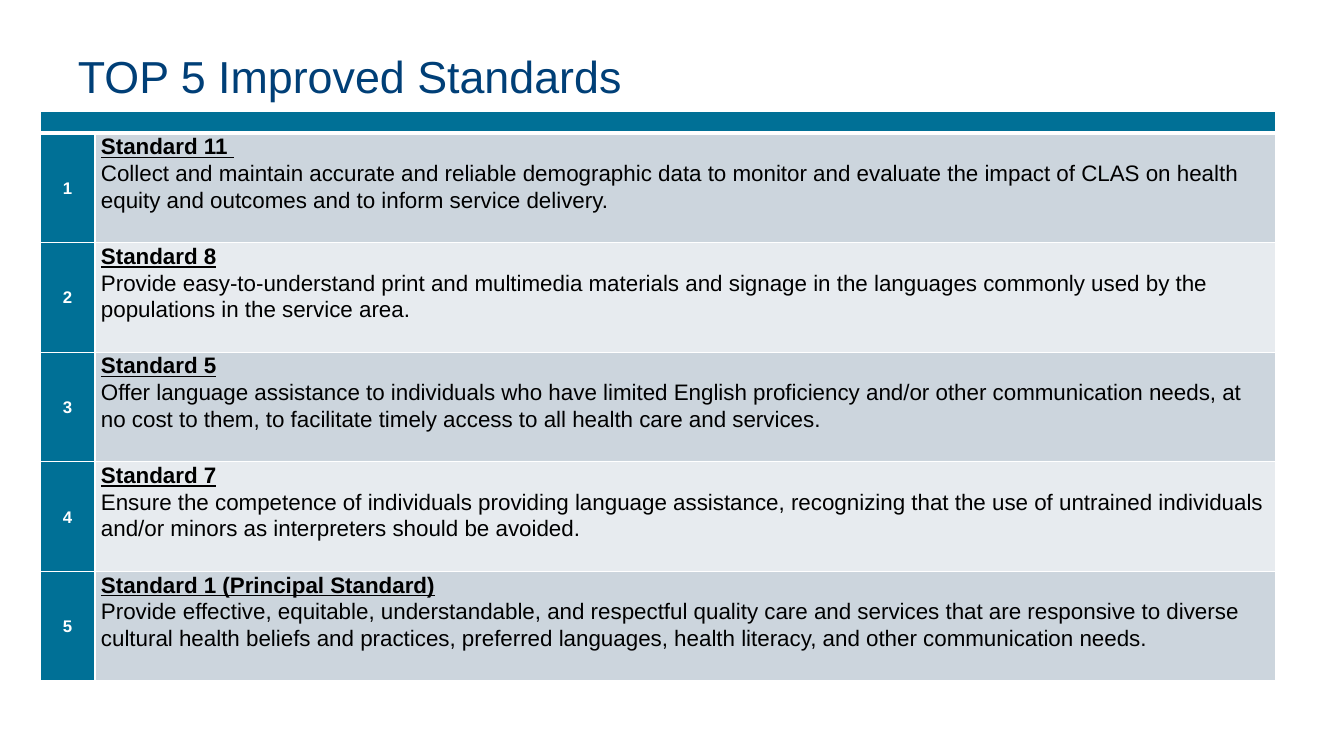
import pptx
import pptx.dml.color
import pptx.enum.text
import pptx.oxml.ns
import pptx.util
from lxml import etree

RGBColor = pptx.dml.color.RGBColor
ANCHOR = pptx.enum.text.MSO_ANCHOR
ALIGN = pptx.enum.text.PP_ALIGN
qn = pptx.oxml.ns.qn

NAVY = RGBColor(0x00, 0x3F, 0x77)
TEAL = RGBColor(0x00, 0x70, 0x96)
BANDS = (RGBColor(0xCC, 0xD5, 0xDD), RGBColor(0xE7, 0xEB, 0xEF))
BLACK = RGBColor(0x00, 0x00, 0x00)
WHITE = RGBColor(0xFF, 0xFF, 0xFF)

FONT = "Arial"
PX_PER_INCH = 100.8

STANDARDS = [
    ("Standard 11 ",
     "Collect and maintain accurate and reliable demographic data to monitor and evaluate "
     "the impact of CLAS on health equity and outcomes and to inform service delivery."),
    ("Standard 8",
     "Provide easy-to-understand print and multimedia materials and signage in the languages "
     "commonly used by the populations in the service area."),
    ("Standard 5",
     "Offer language assistance to individuals who have limited English proficiency and/or "
     "other communication needs, at no cost to them, to facilitate timely access to all "
     "health care and services."),
    ("Standard 7",
     "Ensure the competence of individuals providing language assistance, recognizing that "
     "the use of untrained individuals and/or minors as interpreters should be avoided."),
    ("Standard 1 (Principal Standard)",
     "Provide effective, equitable, understandable, and respectful quality care and services "
     "that are responsive to diverse cultural health beliefs and practices, preferred "
     "languages, health literacy, and other communication needs."),
]

RANK_FORMAT = {"size": pptx.util.Pt(12), "bold": True}
HEADING_FORMAT = {"size": pptx.util.Pt(16), "bold": True, "underline": True}
WORDING_FORMAT = {"size": pptx.util.Pt(16), "bold": False, "underline": False}


def px(length):
    return pptx.util.Emu(round(length * 914400 / PX_PER_INCH))


def write(paragraph, text, color, formats):
    run = paragraph.add_run()
    run.text = text
    run.font.name = FONT
    run.font.color.rgb = color
    for name, value in formats.items():
        setattr(run.font, name, value)


def style_cell(cell, color, heavy_side=None):
    """White borders, tight margins and a plain fill."""
    properties = cell._tc.get_or_add_tcPr()
    for side in ("lnL", "lnR", "lnT", "lnB"):
        width = pptx.util.Pt(3 if side == heavy_side else 1)
        line = etree.SubElement(properties, qn(f"a:{side}"), w=str(width))
        line_fill = etree.SubElement(line, qn("a:solidFill"))
        etree.SubElement(line_fill, qn("a:srgbClr"), val=str(WHITE))
    margins = {"margin_left": px(6), "margin_right": px(6),
               "margin_top": 0, "margin_bottom": 0}
    for name, value in margins.items():
        setattr(cell, name, value)
    cell.fill.solid()
    cell.fill.fore_color.rgb = color


def add_title(slide, left, top, width, height):
    title = slide.shapes.add_textbox(px(left), px(top), px(width), px(height)).text_frame
    title.word_wrap = True
    title.vertical_anchor = ANCHOR.MIDDLE
    write(title.paragraphs[0], "TOP 5 Improved Standards", NAVY, {"size": pptx.util.Pt(32)})


def add_standards(slide, left, top, width, height):
    rank_width, header_height = 55, 22
    row_height = (height - header_height) / len(STANDARDS)
    standards = slide.shapes.add_table(
        len(STANDARDS) + 1, 2, px(left), px(top), px(width), px(height)).table
    standards.first_row = standards.horz_banding = False
    standards.columns[0].width = px(rank_width)
    standards.columns[1].width = px(width - rank_width)

    # Empty header bar; small text size keeps it thin
    standards.rows[0].height = px(header_height)
    for cell in standards.rows[0].cells:
        style_cell(cell, TEAL, heavy_side="lnB")
        etree.SubElement(cell.text_frame.paragraphs[0]._p, qn("a:endParaRPr"), sz="800")
    standards.cell(0, 0).merge(standards.cell(0, 1))

    # Ranked standards
    for rank, (heading, wording) in enumerate(STANDARDS, start=1):
        standards.rows[rank].height = px(row_height)
        rank_cell, standard_cell = standards.rows[rank].cells
        heavy_side = "lnT" if rank == 1 else None
        style_cell(rank_cell, TEAL, heavy_side)
        style_cell(standard_cell, BANDS[(rank - 1) % 2], heavy_side)

        rank_cell.vertical_anchor = ANCHOR.MIDDLE
        rank_line = rank_cell.text_frame.paragraphs[0]
        rank_line.alignment = ALIGN.CENTER
        write(rank_line, str(rank), WHITE, RANK_FORMAT)

        heading_line = standard_cell.text_frame.paragraphs[0]
        wording_line = standard_cell.text_frame.add_paragraph()
        write(heading_line, heading, BLACK, HEADING_FORMAT)
        write(wording_line, wording, BLACK, WORDING_FORMAT)
        for line in (rank_line, heading_line, wording_line):
            line.line_spacing = 1.07


def main():
    presentation = pptx.Presentation()
    presentation.slide_width, presentation.slide_height = px(1344), px(756)
    slide = presentation.slides.add_slide(presentation.slide_layouts[6])
    add_title(slide, 68, 25, 1210, 101)
    add_standards(slide, 40, 111, 1236, 570)
    presentation.save("out.pptx")


if __name__ == "__main__":
    main()
